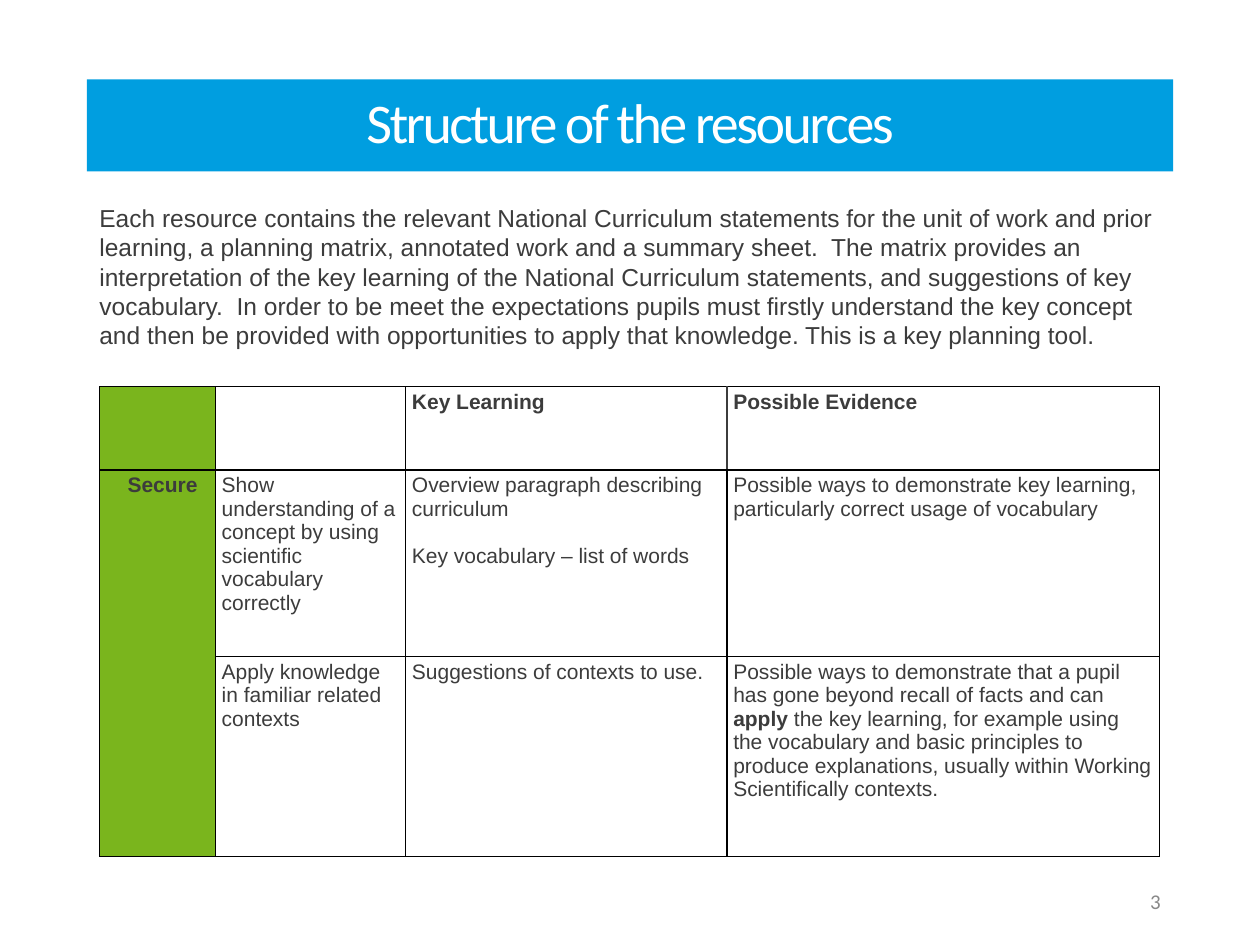
import pptx
import pptx.dml.color
import pptx.enum.text
import pptx.oxml
import pptx.oxml.ns
import pptx.util
from pptx.util import Inches

RGBColor = pptx.dml.color.RGBColor
PP_ALIGN = pptx.enum.text.PP_ALIGN
MSO_ANCHOR = pptx.enum.text.MSO_ANCHOR

BLUE = RGBColor(0x00, 0x9E, 0xE0)
GREEN = RGBColor(0x7A, 0xB5, 0x1D)
DARK = RGBColor(0x3C, 0x3C, 0x3C)
GREY = RGBColor(0x89, 0x89, 0x89)
BLACK = RGBColor(0, 0, 0)
WHITE = RGBColor(0xFF, 0xFF, 0xFF)

TITLE_FONT = {"name": "Calibri", "size": pptx.util.Pt(32), "color": WHITE}
INTRO_FONT = {"name": "Arial", "size": pptx.util.Pt(14), "color": DARK}
CELL_FONT = {"name": "Arial", "size": pptx.util.Pt(12), "color": DARK, "bold": False}
BOLD_CELL_FONT = {**CELL_FONT, "bold": True}
NUMBER_FONT = {"name": "Calibri", "size": pptx.util.Pt(12), "color": GREY}

CELL_MARGINS = {
    "margin_left": Inches(0.05),
    "margin_right": Inches(0.05),
    "margin_top": Inches(0.03),
    "margin_bottom": Inches(0.03),
}

INTRO = (
    "Each resource contains the relevant National Curriculum statements for the unit of "
    "work and prior learning, a planning matrix, annotated work and a summary sheet.  The "
    "matrix provides an interpretation of the key learning of the National Curriculum "
    "statements, and suggestions of key vocabulary.  In order to be meet the expectations "
    "pupils must firstly understand the key concept and then be provided with "
    "opportunities to apply that knowledge. This is a key planning tool."
)

COLUMN_WIDTHS = (0.92, 1.51, 2.55, 3.43)
ROW_HEIGHTS = (0.66, 1.48, 1.59)

# Each cell is a list of paragraphs, each paragraph a list of (text, font) runs.
MATRIX = [
    [
        [],
        [],
        [[("Key Learning", BOLD_CELL_FONT)]],
        [[("Possible Evidence", BOLD_CELL_FONT)]],
    ],
    [
        [[("Secure", BOLD_CELL_FONT)]],
        [[("Show understanding of a concept by using scientific vocabulary correctly",
           CELL_FONT)]],
        [[("Overview paragraph describing curriculum", CELL_FONT)],
         [("Key vocabulary – list of words", CELL_FONT)]],
        [[("Possible ways to demonstrate key learning, particularly correct usage of "
           "vocabulary", CELL_FONT)]],
    ],
    [
        [],
        [[("Apply knowledge in familiar related contexts", CELL_FONT)]],
        [[("Suggestions of contexts to use.", CELL_FONT)]],
        [[("Possible ways to demonstrate that a pupil has gone beyond recall of facts and "
           "can ", CELL_FONT),
          ("apply", BOLD_CELL_FONT),
          (" the key learning, for example using the vocabulary and basic principles to "
           "produce explanations, usually within Working Scientifically contexts.",
           CELL_FONT)]],
    ],
]


def add_run(paragraph, text, font_format):
    run = paragraph.add_run()
    run.text = text
    for name, value in font_format.items():
        if name == "color":
            run.font.color.rgb = value
        else:
            setattr(run.font, name, value)
    return run


def format_title(title):
    title.left, title.top = Inches(0.69), Inches(0.63)
    title.width, title.height = Inches(8.62), Inches(0.73)
    title.fill.solid()
    title.fill.fore_color.rgb = BLUE
    frame = title.text_frame
    frame.auto_size = pptx.enum.text.MSO_AUTO_SIZE.NONE
    frame.vertical_anchor = MSO_ANCHOR.MIDDLE
    heading = frame.paragraphs[0]
    heading.alignment = PP_ALIGN.CENTER
    heading.line_spacing = 0.9
    run = add_run(heading, "Structure of the resources", TITLE_FONT)
    run.font._element.set("spc", "-150")


def add_text(slide, box, text, font_format, align, anchor):
    frame = slide.shapes.add_textbox(*map(Inches, box)).text_frame
    frame.word_wrap = True
    frame.vertical_anchor = anchor
    frame.paragraphs[0].alignment = align
    add_run(frame.paragraphs[0], text, font_format)


def set_borders(cell, lines):
    """Draw the cell borders given as {side: (colour, points)}, sides in L, R, T, B order."""
    properties = cell._tc.get_or_add_tcPr()
    for side, (color, points) in lines.items():
        properties.append(pptx.oxml.parse_xml(
            f'<a:ln{side} {pptx.oxml.ns.nsdecls("a")} w="{pptx.util.Pt(points)}">'
            f'<a:solidFill><a:srgbClr val="{color}"/></a:solidFill></a:ln{side}>'
        ))


def fill_cell(cell, paragraphs):
    for name, value in CELL_MARGINS.items():
        setattr(cell, name, value)
    frame = cell.text_frame
    for index, runs in enumerate(paragraphs):
        paragraph = frame.add_paragraph() if index else frame.paragraphs[0]
        if index:
            paragraph.space_before = pptx.util.Pt(13.5)
        for text, font_format in runs:
            add_run(paragraph, text, font_format)


def add_matrix(slide):
    matrix = slide.shapes.add_table(
        len(ROW_HEIGHTS), len(COLUMN_WIDTHS), Inches(0.79), Inches(3.07),
        Inches(sum(COLUMN_WIDTHS)), Inches(sum(ROW_HEIGHTS)),
    ).table
    matrix.first_row = matrix.horz_banding = False
    for column, width in zip(matrix.columns, COLUMN_WIDTHS):
        column.width = Inches(width)
    for row, height in zip(matrix.rows, ROW_HEIGHTS):
        row.height = Inches(height)

    for r, row in enumerate(MATRIX):
        for c, paragraphs in enumerate(row):
            cell = matrix.cell(r, c)
            fill_cell(cell, paragraphs)
            lines = dict.fromkeys("LRTB", (BLACK, 0.75))
            if r == 0 and c in (2, 3):
                lines["R" if c == 2 else "L"] = (DARK, 1)
            set_borders(cell, lines)
            if c == 0:
                cell.fill.solid()
                cell.fill.fore_color.rgb = GREEN
            else:
                cell.fill.background()

    secure = matrix.cell(1, 0)
    secure.merge(matrix.cell(2, 0))
    level = secure.text_frame.paragraphs[0]
    level.alignment = PP_ALIGN.CENTER
    level._p.get_or_add_pPr().set("marL", str(Inches(0.08)))


def main():
    presentation = pptx.Presentation()
    presentation.slide_width = Inches(10)
    presentation.slide_height = Inches(7.5)
    slide = presentation.slides.add_slide(presentation.slide_layouts[5])
    format_title(slide.shapes.title)
    add_matrix(slide)
    add_text(slide, (0.69, 1.56, 8.62, 1.51), INTRO, INTRO_FONT,
             PP_ALIGN.LEFT, MSO_ANCHOR.TOP)
    add_text(slide, (7.06, 6.95, 2.25, 0.4), "3", NUMBER_FONT,
             PP_ALIGN.RIGHT, MSO_ANCHOR.MIDDLE)
    presentation.save("out.pptx")


if __name__ == "__main__":
    main()
